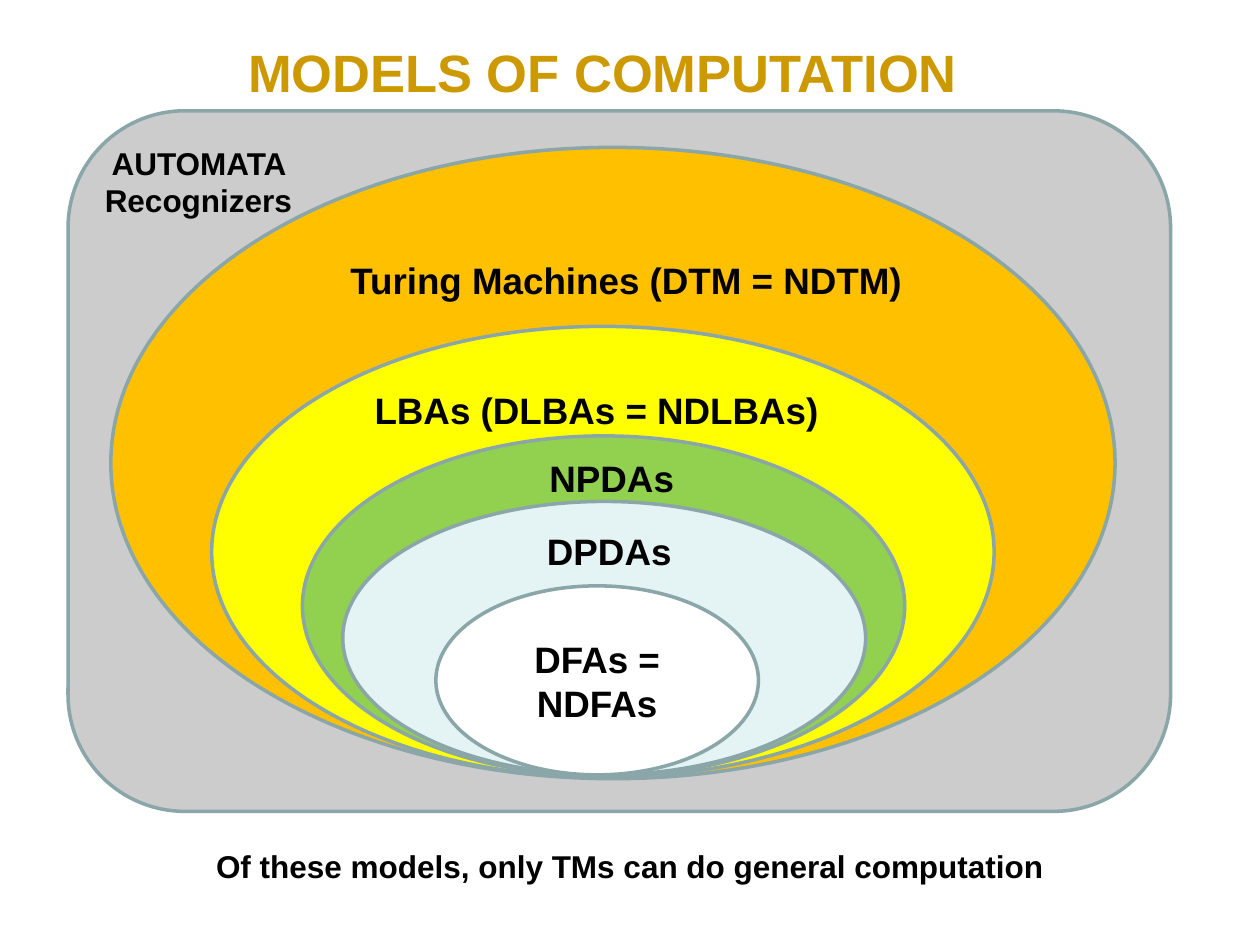
from pptx import Presentation
from pptx import util as u
from pptx.dml.color import RGBColor
from pptx.enum import shapes, text

BLACK = RGBColor(0x00, 0x00, 0x00)
WHITE = RGBColor(0xFF, 0xFF, 0xFF)
GOLD = RGBColor(0xCC, 0x99, 0x00)
GREY = RGBColor(0xCC, 0xCC, 0xCC)
OUTLINE = RGBColor(0x8A, 0xA6, 0xA8)
ORANGE = RGBColor(0xFF, 0xC0, 0x00)
YELLOW = RGBColor(0xFF, 0xFF, 0x00)
GREEN = RGBColor(0x92, 0xD0, 0x50)
PALE_BLUE = RGBColor(0xE4, 0xF3, 0xF4)

COLUMNS, ROWS = 100, 75
WIDTH, HEIGHT = u.Inches(10), u.Inches(7.5)


def grid(left, top, width, height):
    column, row = WIDTH / COLUMNS, HEIGHT / ROWS
    return [round(n) for n in (left * column, top * row, width * column, height * row)]


def write(box, words, size=21, color=BLACK, anchor=text.MSO_ANCHOR.TOP):
    frame = box.text_frame
    frame.word_wrap = True
    frame.auto_size = text.MSO_AUTO_SIZE.NONE
    frame.vertical_anchor = anchor
    para = frame.paragraphs[0]
    para.alignment = text.PP_ALIGN.CENTER
    span = para.add_run()
    span.text = words
    span.font.name = "Arial"
    span.font.size = u.Pt(size)
    span.font.bold = True
    span.font.color.rgb = color


def add_title(page, words, cells, **style):
    title = page.shapes.title
    title.left, title.top, title.width, title.height = grid(*cells)
    write(title, words, **style)


def add_label(page, words, cells, **style):
    write(page.shapes.add_textbox(*grid(*cells)), words, **style)


def add_region(page, kind, cells, fill):
    region = page.shapes.add_shape(kind, *grid(*cells))
    region.shadow.inherit = False
    region.fill.solid()
    region.fill.fore_color.rgb = fill
    region.line.color.rgb = OUTLINE
    region.line.width = u.Pt(2)
    return region


def main():
    deck = Presentation()
    deck.slide_width, deck.slide_height = WIDTH, HEIGHT
    page = deck.slides.add_slide(deck.slide_layouts[5])
    oval = shapes.MSO_SHAPE.OVAL

    add_title(page, "MODELS OF COMPUTATION", (15.9, 2.7, 63.9, 6.1), size=30, color=GOLD)
    add_region(page, shapes.MSO_SHAPE.ROUNDED_RECTANGLE, (5.4, 8.8, 87.5, 55.6), GREY)

    classes = [
        ("Turing Machines (DTM = NDTM)", (25.8, 20, 47.8, 4.5), (8.8, 11.7, 79.7, 50.1), ORANGE),
        ("LBAs (DLBAs = NDLBAs)", (28, 30.3, 38.7, 4.5), (16.8, 25.9, 62.1, 35.8), YELLOW),
        ("NPDAs", (34.6, 35.7, 27.9, 4.5), (24, 34.6, 47.8, 27), GREEN),
        ("DPDAs", (34.9, 41.5, 26.9, 4.5), (27.2, 39.8, 41.5, 21.7), PALE_BLUE),
    ]
    for words, label_cells, oval_cells, fill in classes:
        add_region(page, oval, oval_cells, fill)
        add_label(page, words, label_cells)

    core = add_region(page, oval, (34.6, 46.5, 25.6, 15), WHITE)
    write(core, "DFAs = NDFAs", anchor=text.MSO_ANCHOR.MIDDLE)

    add_label(page, "AUTOMATA Recognizers", (5.9, 10.9, 19.7, 7.1), size=18)
    add_label(page, "Of these models, only TMs can do general computation",
              (12.5, 66.7, 75, 4), size=18)
    deck.save("out.pptx")


if __name__ == "__main__":
    main()
